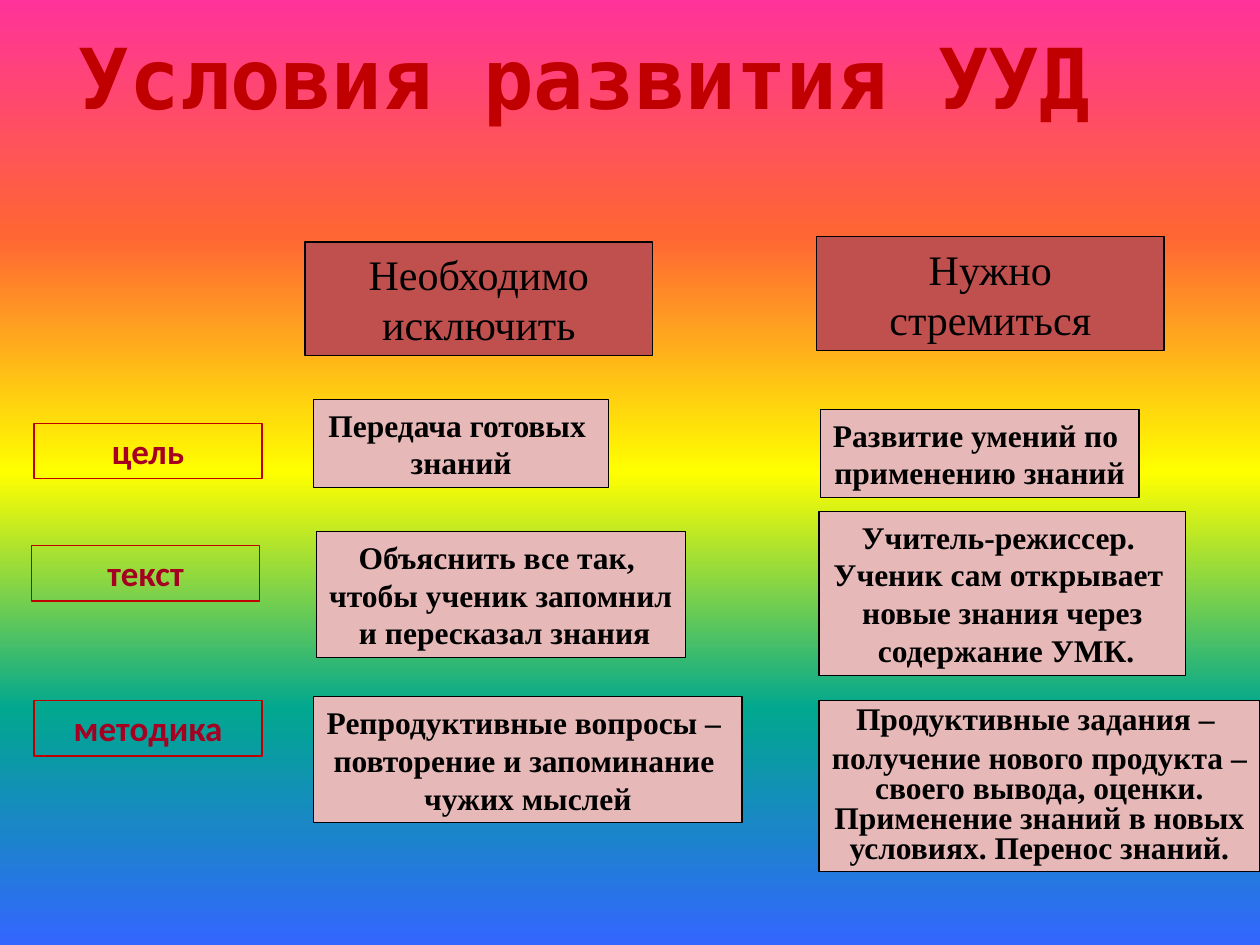
"""Build the slide on the conditions for developing learning skills."""
from lxml.etree import SubElement
from pptx import Presentation
from pptx.dml.color import RGBColor
from pptx.enum.shapes import MSO_SHAPE as Shape
from pptx.enum.text import MSO_ANCHOR as Anchor, MSO_AUTO_SIZE as Fit, PP_ALIGN as Align
from pptx.oxml.ns import qn
from pptx.util import Inches, Pt

BLACK = RGBColor(0x00, 0x00, 0x00)
RED = RGBColor(0xC0, 0x00, 0x00)
WINE = RGBColor(0xA5, 0x00, 0x21)
BRICK = RGBColor(0xC0, 0x50, 0x4D)
PINK = RGBColor(0xE6, 0xB9, 0xB8)
SERIF = "Times New Roman"
STOPS = [(0, "FF3399"), (25, "FF6633"), (50, "FFFF00"), (75, "01A78F"), (100, "3366FF")]


def write(frame, lines, name, size, color, bold):
    frame.text = "\n".join(lines)
    for par in frame.paragraphs:
        par.alignment = Align.CENTER
        font = par.font
        font.name, font.size, font.bold = name, Pt(size), bold
        font.color.rgb = color


def add_box(area, lines, fill, line, name, size, color, bold=True, wrap=True):
    box = slide.shapes.add_shape(Shape.RECTANGLE, *map(Inches, area))
    box.shadow.inherit = False
    if fill is None:
        box.fill.background()
    else:
        box.fill.solid()
        box.fill.fore_color.rgb = fill
    box.line.color.rgb = line
    box.line.width = Pt(0.75)
    frame = box.text_frame
    frame.word_wrap = wrap
    frame.auto_size = Fit.SHAPE_TO_FIT_TEXT
    frame.vertical_anchor = Anchor.TOP
    write(frame, lines, name, size, color, bold)
    return frame


prs = Presentation()
prs.slide_width, prs.slide_height = Inches(10), Inches(7.5)
slide = prs.slides.add_slide(prs.slide_layouts[6])

back = slide.background.fill
back.gradient()
back.gradient_angle = 270
stops = slide.element.find(".//" + qn("a:gsLst"))
for stop in list(stops):
    stops.remove(stop)
for pos, color in STOPS:
    stop = SubElement(stops, qn("a:gs"), pos=str(pos * 1000))
    SubElement(stop, qn("a:srgbClr"), val=color)

title = slide.shapes.add_textbox(Inches(0.5), Inches(-0.29), Inches(8.28), Inches(2.5))
frame = title.text_frame
frame.word_wrap = True
frame.vertical_anchor = Anchor.MIDDLE
frame.margin_bottom = Inches(0.77)
write(frame, ["Условия развития УУД"], "DejaVu Sans Mono", 48, RED, True)

for left, top, text in [(0.27, 3.36, "цель"), (0.25, 4.33, "текст"), (0.27, 5.56, "методика")]:
    add_box((left, top, 1.81, 0.44), [text], None, RED, "Calibri", 20, WINE)

for left, top, text in [(2.42, 1.92, "Необходимо исключить"), (6.48, 1.88, "Нужно стремиться")]:
    add_box((left, top, 2.76, 0.9), [text], BRICK, BLACK, SERIF, 24, BLACK, bold=False)

cards = [
    ((2.49, 3.17, 2.34, 0.7), False, ["Передача готовых ", "знаний"]),
    ((2.51, 4.22, 2.93, 1), False,
     ["Объяснить все так, ", "чтобы ученик запомнил", " и пересказал знания"]),
    ((2.49, 5.53, 3.4, 1), False,
     ["Репродуктивные вопросы – ", "повторение и запоминание ", "чужих мыслей"]),
    ((6.51, 3.25, 2.53, 0.7), False, ["Развитие умений по ", "применению знаний"]),
    ((6.5, 4.06, 2.91, 1.3), True,
     ["Учитель-режиссер. ", "Ученик сам открывает ", "новые знания через", " содержание УМК."]),
    ((6.5, 5.56, 3.5, 1.36), True,
     ["Продуктивные задания – ",
      "получение нового продукта – своего вывода, оценки. "
      "Применение знаний в новых условиях. Перенос знаний."]),
]
for area, wrap, lines in cards:
    frame = add_box(area, lines, PINK, BLACK, SERIF, 18, BLACK, wrap=wrap)
for par in frame.paragraphs:
    par.line_spacing = 0.8
    par.space_before = Pt(4.5)

prs.save("out.pptx")
